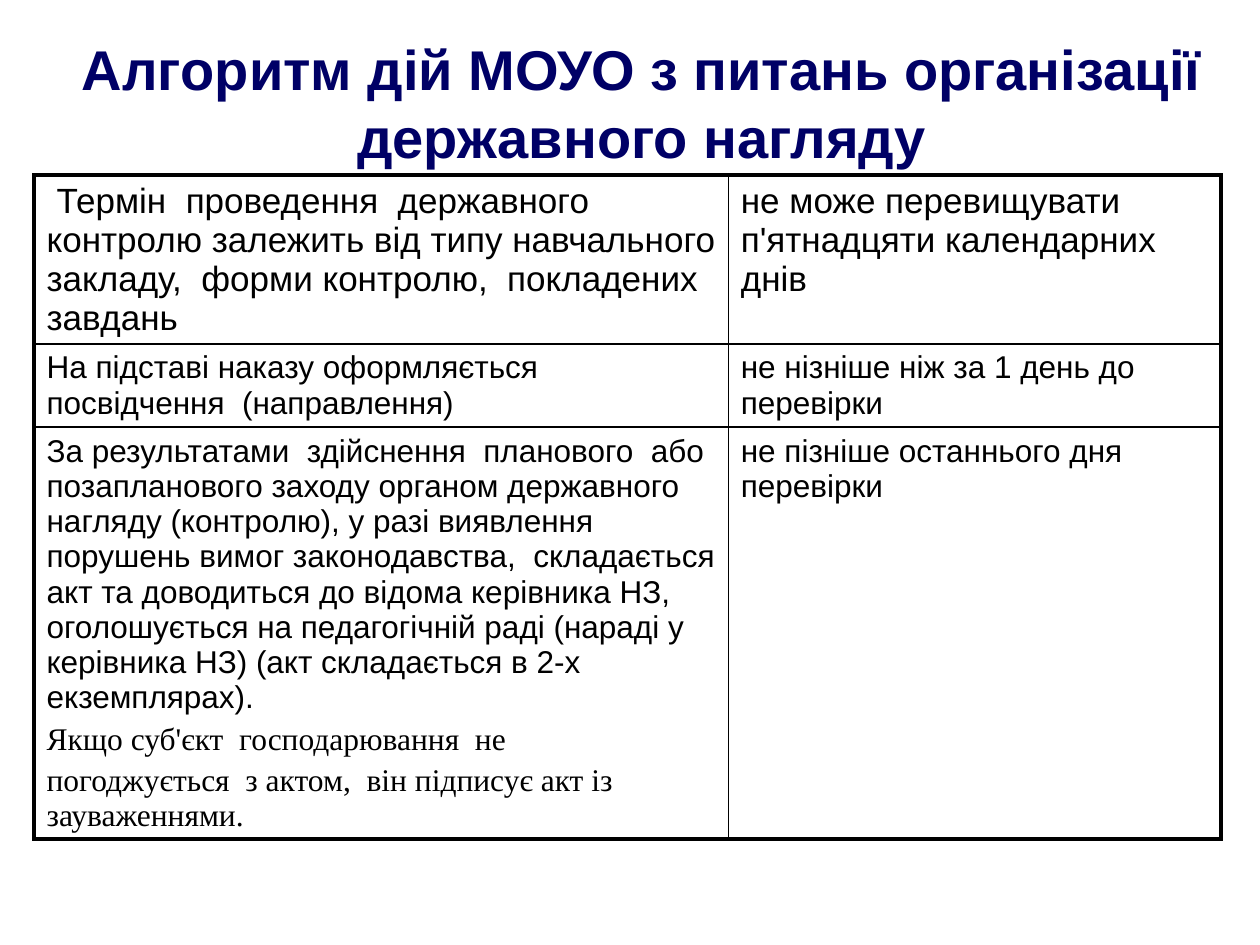
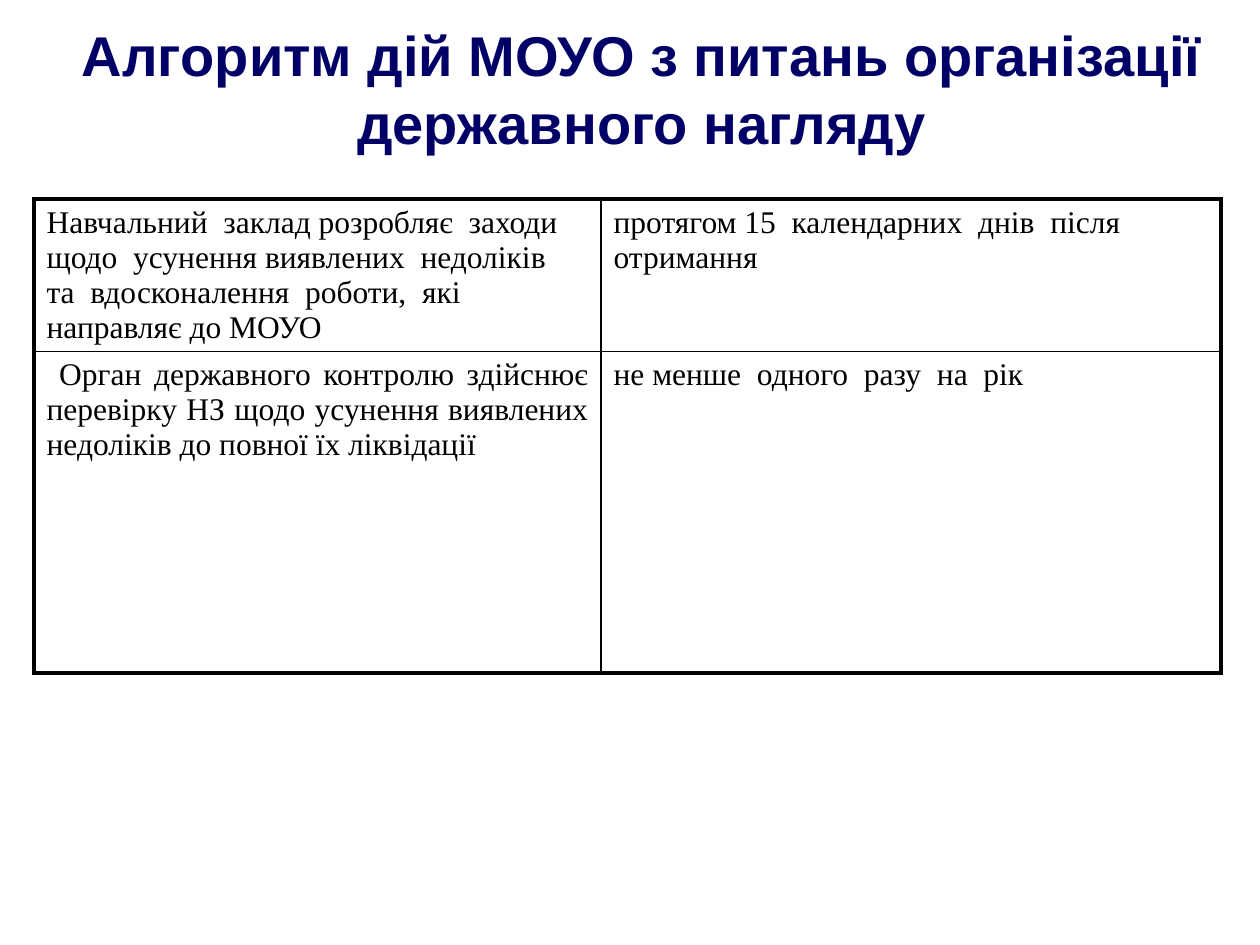
import pptx
import pptx.util
import pptx.dml.color
import pptx.enum.text
import pptx.oxml.ns
from lxml import etree

Inches, Pt = pptx.util.Inches, pptx.util.Pt
ALIGN = pptx.enum.text.PP_ALIGN
COLORS = {"title": "000066", "text": "000000", "border": "000000"}
SANS, SERIF = "Arial", "Times New Roman"
WIDTH, HEIGHT = 10, 7.5
TITLE = "Алгоритм дій МОУО з питань організації державного нагляду"
TABLE_LEFT = 0.27
OUTER, INNER = 2.25, 1  # border widths, points


def rgb(name):
    return pptx.dml.color.RGBColor.from_string(COLORS[name])


def para(text, size=18, font=SERIF, align=ALIGN.LEFT, indent=0):
    return dict(text=text, size=size, font=font, align=align, indent=indent)


def style(p, font, size, color, align, bold=False):
    p.alignment = align
    p.font.name, p.font.size, p.font.bold = font, Pt(size), bold
    p.font.color.rgb = rgb(color)


def add_title(slide, top, height):
    sp = slide.shapes.title
    sp.left, sp.top = 0, Inches(top)
    sp.width, sp.height = Inches(WIDTH), Inches(height)
    tf = sp.text_frame
    tf.auto_size = pptx.enum.text.MSO_AUTO_SIZE.NONE
    tf.vertical_anchor = pptx.enum.text.MSO_ANCHOR.MIDDLE
    p = tf.paragraphs[0]
    p.text = TITLE
    p._p.get_or_add_pPr().set("marL", str(Inches(0.19)))
    style(p, SANS, 32, "title", ALIGN.CENTER, bold=True)


def set_borders(cell, widths):
    tc_pr = cell._tc.get_or_add_tcPr()
    for side in "LRTB":
        ln = etree.SubElement(tc_pr, pptx.oxml.ns.qn("a:ln" + side), w=str(Pt(widths[side])))
        fill = etree.SubElement(ln, pptx.oxml.ns.qn("a:solidFill"))
        etree.SubElement(fill, pptx.oxml.ns.qn("a:srgbClr"), val=COLORS["border"])


def fill_cell(cell, paras):
    tf = cell.text_frame
    for i, item in enumerate(paras):
        p = tf.add_paragraph() if i else tf.paragraphs[0]
        p.text = item["text"]
        if i:
            p.space_before = Pt(0.2 * item["size"])
        if item["indent"]:
            p._p.get_or_add_pPr().set("indent", str(Inches(item["indent"])))
        style(p, item["font"], item["size"], "text", item["align"])


def add_grid(slide, top, cols, rows, content):
    """Table with a thick outer frame and thin inner lines."""
    frame = slide.shapes.add_table(len(rows), len(cols), Inches(TABLE_LEFT), Inches(top),
                                   Inches(sum(cols)), Inches(sum(rows)))
    table = frame.table
    table.first_row = table.horz_banding = False
    for col, width in zip(table.columns, cols):
        col.width = Inches(width)
    for row, height in zip(table.rows, rows):
        row.height = Inches(height)
    for r, line in enumerate(content):
        for c, paras in enumerate(line):
            cell = table.cell(r, c)
            fill_cell(cell, paras)
            edges = {"L": c == 0, "R": c == len(cols) - 1,
                     "T": r == 0, "B": r == len(rows) - 1}
            set_borders(cell, {k: OUTER if edge else INNER for k, edge in edges.items()})
            cell.fill.background()


# Each slide: title box, table top, column widths, row heights, cells
SLIDES = [
    dict(title=(0.52, 0.58), top=1.39, cols=(5.51, 3.91), rows=(1.34, 0.66, 3.26), content=[
        [[para("Термін  проведення  державного  контролю залежить від типу навчального "
               "закладу,  форми контролю,  покладених завдань", 20, SANS, indent=0.08)],
         [para("не може перевищувати п'ятнадцяти календарних днів", 20, SANS)]],
        [[para("На підставі наказу оформляється посвідчення  (направлення)", font=SANS)],
         [para("не нізніше ніж за 1 день до перевірки", font=SANS)]],
        [[para("За результатами  здійснення  планового  або  позапланового заходу органом "
               "державного нагляду (контролю), у разі виявлення порушень вимог "
               "законодавства,  складається акт та доводиться до відома керівника НЗ, "
               "оголошується на педагогічній раді (нараді у керівника НЗ) "
               "(акт складається в 2-х екземплярах).", font=SANS),
          para("Якщо суб'єкт  господарювання  не"),
          para("погоджується  з актом,  він підписує акт із зауваженнями.")],
         [para("не пізніше останнього дня перевірки", font=SANS)]],
    ]),
    dict(title=(0.17, 1.06), top=1.58, cols=(4.5, 4.92), rows=(1.21, 2.55), content=[
        [[para("Навчальний  заклад розробляє  заходи  щодо  усунення виявлених  недоліків  "
               "та  вдосконалення  роботи,  які направляє до МОУО")],
         [para("протягом 15  календарних  днів  після отримання")]],
        [[para("Орган державного контролю здійснює перевірку НЗ щодо усунення виявлених "
               "недоліків до повної їх ліквідації", align=ALIGN.JUSTIFY, indent=0.1)],
         [para("не менше  одного  разу  на  рік")]],
    ]),
]


def main():
    prs = pptx.Presentation()
    prs.slide_width, prs.slide_height = Inches(WIDTH), Inches(HEIGHT)
    for item in SLIDES:
        slide = prs.slides.add_slide(prs.slide_layouts[5])
        add_title(slide, *item["title"])
        add_grid(slide, item["top"], item["cols"], item["rows"], item["content"])
    prs.save("out.pptx")


if __name__ == "__main__":
    main()
